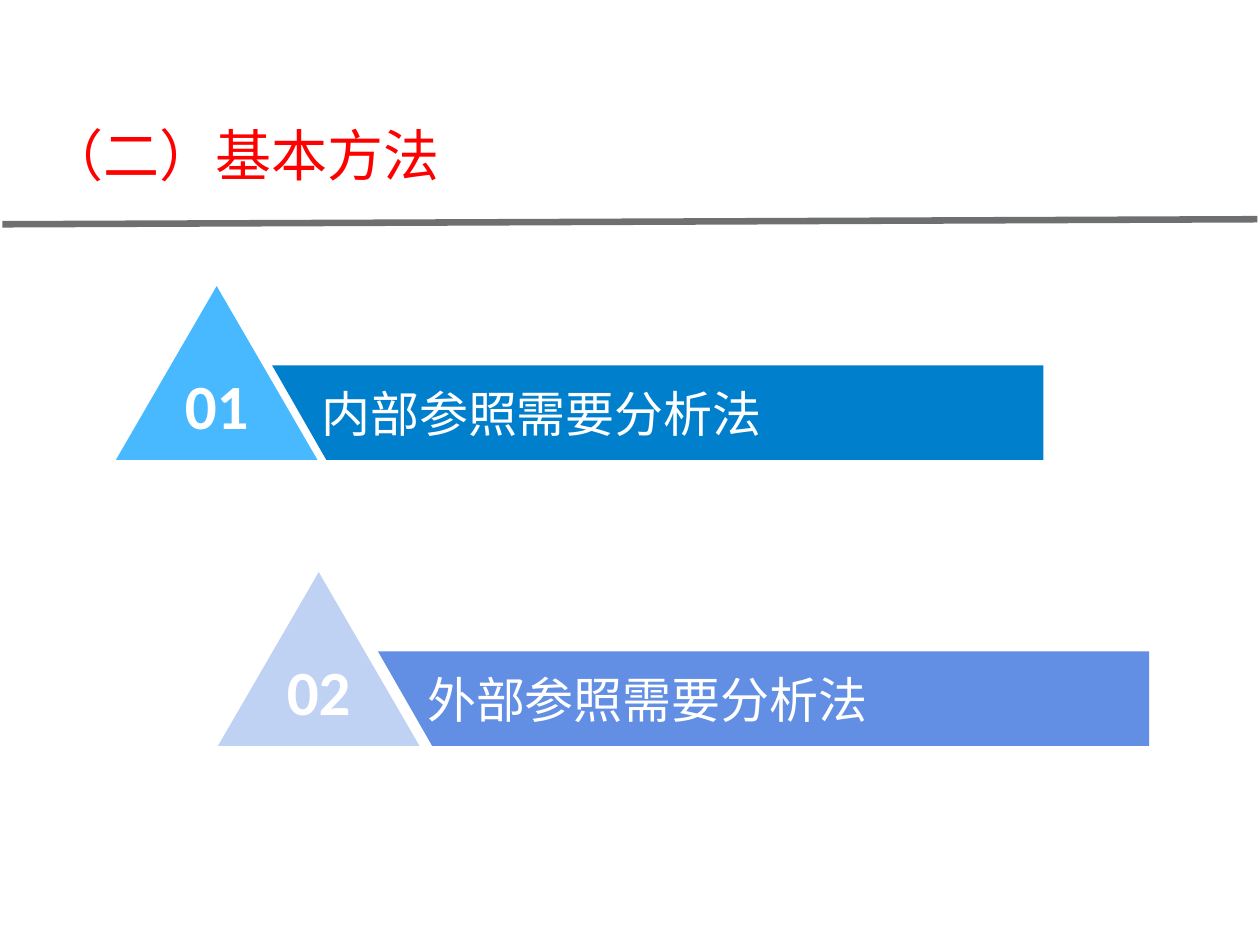
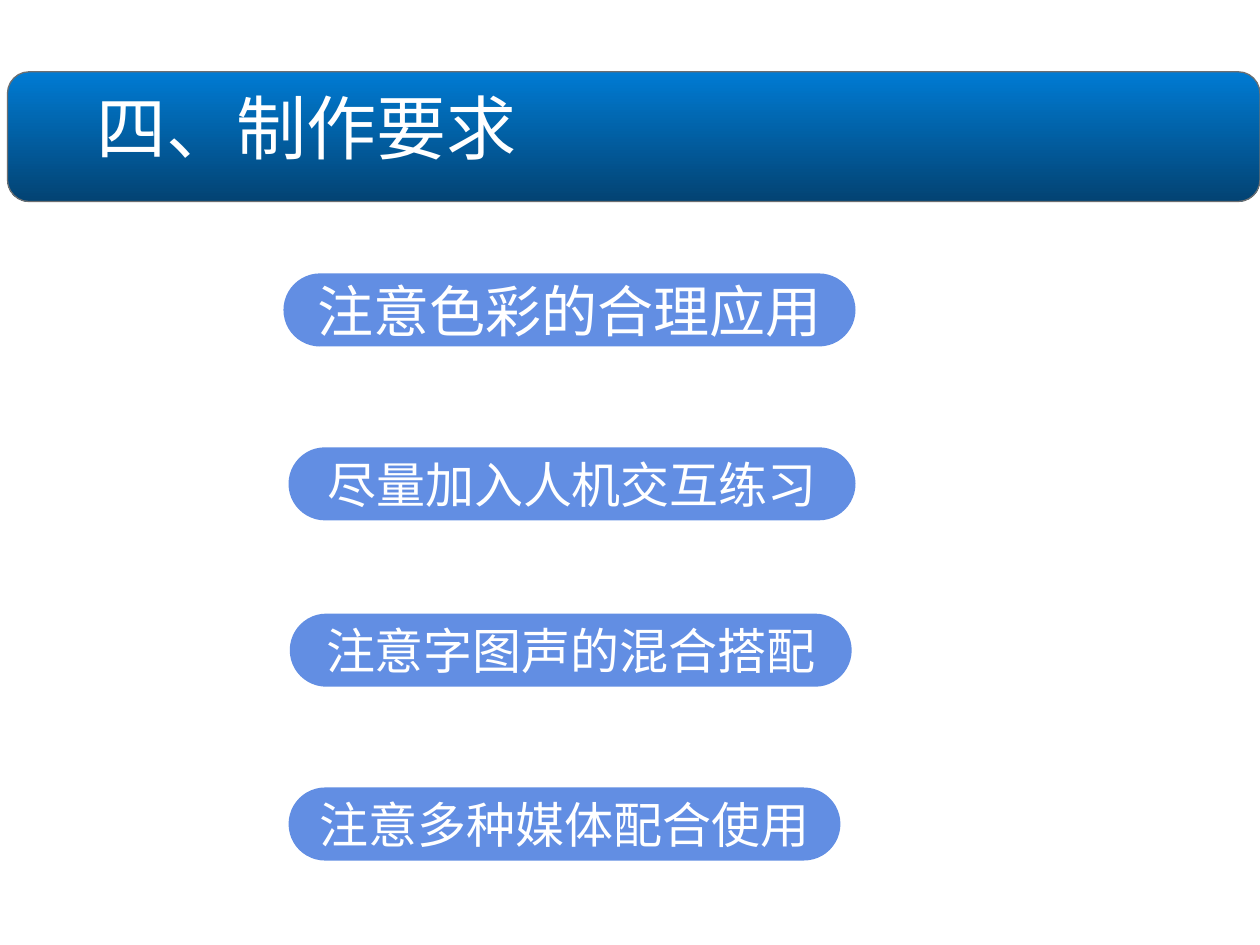
from dataclasses import dataclass
from lxml import etree
from pptx import Presentation
from pptx.dml.color import RGBColor
from pptx.enum.shapes import MSO_CONNECTOR, MSO_SHAPE
from pptx.enum.text import MSO_ANCHOR, PP_ALIGN
from pptx.oxml.ns import qn
from pptx.util import Inches, Pt

LEFT, CENTER, JUST = PP_ALIGN.LEFT, PP_ALIGN.CENTER, PP_ALIGN.JUSTIFY
TOP, MIDDLE = MSO_ANCHOR.TOP, MSO_ANCHOR.MIDDLE
ROUND, PEAK = MSO_SHAPE.ROUNDED_RECTANGLE, MSO_SHAPE.ISOSCELES_TRIANGLE
STRAIGHT = MSO_CONNECTOR.STRAIGHT


@dataclass(frozen=True)
class Theme:
    white: str = "FFFFFF"
    red: str = "FF0000"
    gray: str = "6D6F71"
    sky: str = "48B9FF"
    blue: str = "007FCD"
    pale: str = "C0D2F4"
    soft: str = "628EE3"
    fade: tuple = ("007BD3", "034373")
    head: str = "Arial"
    body: str = "Calibri"
    banner: int = 40
    number: int = 36
    large: int = 32
    normal: int = 28


T = Theme()

# Content
METHOD_TITLE = "（二）基本方法"
# number, label, triangle left, bar left, top, triangle fill, bar fill
METHODS = [
    ("01", "内部参照需要分析法", 0.92, 2.16, 2.27, T.sky, T.blue),
    ("02", "外部参照需要分析法", 1.73, 3.0, 4.54, T.pale, T.soft),
]
RULES_TITLE = "四、制作要求"
# label, left, top, width, type size
RULES = [
    ("注意色彩的合理应用", 2.25, 2.17, 4.54, T.large),
    ("尽量加入人机交互练习", 2.29, 3.55, 4.5, T.normal),
    ("注意字图声的混合搭配", 2.3, 4.87, 4.46, T.normal),
    ("注意多种媒体配合使用", 2.29, 6.25, 4.38, T.normal),
]


# Shared helpers
def rgb(code):
    return RGBColor.from_string(code)


def paint(shape, color):
    shape.shadow.inherit = False
    shape.fill.solid()
    shape.fill.fore_color.rgb = rgb(color)
    shape.line.fill.background()


def write(shape, text, size, font=T.body, color=T.white, bold=False,
          align=LEFT, anchor=MIDDLE, pad=(0.1, 0.05, 0.1, 0.05)):
    frame = shape.text_frame
    frame.word_wrap = True
    frame.vertical_anchor = anchor
    (frame.margin_left, frame.margin_top,
     frame.margin_right, frame.margin_bottom) = map(Inches, pad)
    para = frame.paragraphs[0]
    para.text = text
    para.alignment = align
    style = para.font
    style.name, style.size, style.bold = font, Pt(size), bold
    style.color.rgb = rgb(color)


def add(slide, kind, *box):
    return slide.shapes.add_shape(kind, *map(Inches, box))


# Parts
def add_method(slide, num, label, left, start, top, light, dark):
    base = top + 1.38
    peak = add(slide, PEAK, left, top, 1.6, 1.38)
    paint(peak, light)
    write(peak, num, T.number, bold=True, align=CENTER,
          pad=(0.1, 0.05, 0.1, 0.24))
    roof, end = base - 0.75, start + 6.12
    dots = [(Inches(x), Inches(y)) for x, y in
            [(start, roof), (end, roof), (end, base), (start + 0.43, base)]]
    pen = slide.shapes.build_freeform(*dots[0])
    pen.add_line_segments(dots[1:], close=True)
    bar = pen.convert_to_shape()
    paint(bar, dark)
    write(bar, label, T.normal, align=JUST, pad=(0.39, 0.05, 0.1, 0.05))


def add_rule(slide, label, left, top, width, size):
    pill = add(slide, ROUND, left, top, width, 0.58)
    pill.adjustments[0] = 0.5
    paint(pill, T.soft)
    write(pill, label, size, align=CENTER, pad=(0, 0, 0, 0))


def add_line(slide, *ends):
    line = slide.shapes.add_connector(STRAIGHT, *map(Inches, ends))
    line.line.color.rgb = rgb(T.gray)
    line.line.width = Pt(3.75)
    etree.SubElement(line._element.spPr, qn("a:effectLst"))


def add_banner(slide, text):
    band = add(slide, ROUND, 0.06, 0.57, 9.94, 1.03)
    band.shadow.inherit = False
    band.fill.gradient()
    band.fill.gradient_angle = 270
    for stop, color, place in zip(band.fill.gradient_stops, T.fade, (0, 1)):
        stop.color.rgb = rgb(color)
        stop.position = place
    band.line.color.rgb = rgb(T.gray)
    band.line.width = Pt(0.75)
    write(band, text, T.banner, T.head, anchor=TOP,
          pad=(0.66, 0.05, 0.1, 0.05))


# Slides
def main():
    deck = Presentation()
    deck.slide_width, deck.slide_height = Inches(10), Inches(7.5)
    blank = deck.slide_layouts[6]

    slide = deck.slides.add_slide(blank)
    title = slide.shapes.add_textbox(*map(Inches, (0.28, 0.91, 8.5, 0.64)))
    write(title, METHOD_TITLE, T.large, T.head, T.red, anchor=TOP)
    for method in METHODS:
        add_method(slide, *method)
    add_line(slide, 0.02, 1.78, 9.98, 1.74)

    slide = deck.slides.add_slide(blank)
    for rule in RULES:
        add_rule(slide, *rule)
    add_banner(slide, RULES_TITLE)

    deck.save("out.pptx")


if __name__ == "__main__":
    main()
